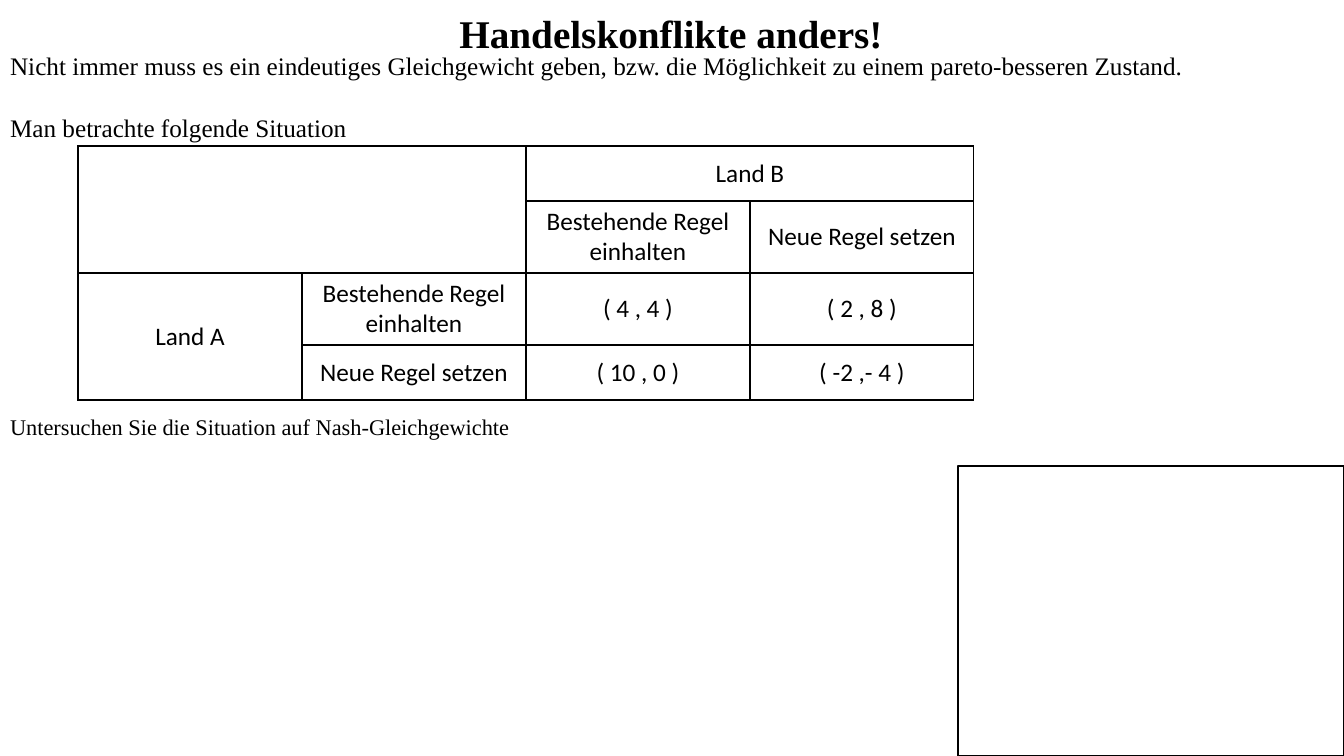
from lxml.etree import SubElement
from pptx import Presentation
from pptx.dml.color import RGBColor
from pptx.enum.shapes import MSO_SHAPE
from pptx.enum.text import MSO_ANCHOR, MSO_AUTO_SIZE, PP_ALIGN
from pptx.oxml.ns import qn
from pptx.util import Pt

EMU_PER_PX = 12192000 / 1344
BLACK = RGBColor(0x00, 0x00, 0x00)
SERIF = "Times New Roman"
SANS = "Calibri"

# text, size in points, space before in points
STATEMENTS = [
    ("Nicht immer muss es ein eindeutiges Gleichgewicht geben, "
     "bzw. die Möglichkeit zu einem pareto-besseren Zustand.", 18, 0),
    ("Man betrachte folgende Situation", 18, 23),
    ("Untersuchen Sie die Situation auf Nash-Gleichgewichte", 16, 193),
]

KEEP_RULE = "Bestehende Regel einhalten"
NEW_RULE = "Neue Regel setzen"
PAYOFFS = [
    ["", "", "Land B", ""],
    ["", "", KEEP_RULE, NEW_RULE],
    ["Land A", KEEP_RULE, "( 4 , 4 )", "( 2 , 8 )"],
    ["", NEW_RULE, "( 10 , 0 )", "( -2 ,- 4 )"],
]
MERGES = [((0, 0), (1, 1)), ((0, 2), (0, 3)), ((2, 0), (3, 0))]
ROW_HEIGHTS = [55, 72, 72, 55]


def px(length):
    return round(length * EMU_PER_PX)


def place(shape, box):
    shape.left, shape.top, shape.width, shape.height = map(px, box)


def add_run(paragraph, text, size, font_name, bold=False):
    run = paragraph.add_run()
    run.text = text
    run.font.size = Pt(size)
    run.font.name = font_name
    run.font.bold = bold
    run.font.color.rgb = BLACK


def fill_title(title, box):
    place(title, box)
    frame = title.text_frame
    frame.auto_size = MSO_AUTO_SIZE.NONE
    frame.vertical_anchor = MSO_ANCHOR.MIDDLE
    heading = frame.paragraphs[0]
    heading.alignment = PP_ALIGN.CENTER
    add_run(heading, "Handelskonflikte anders!", 28, SERIF, bold=True)


def fill_body(body, box):
    place(body, box)
    frame = body.text_frame
    frame.auto_size = MSO_AUTO_SIZE.NONE
    frame.vertical_anchor = MSO_ANCHOR.TOP
    frame.margin_top = px(8)
    for index, (text, size, gap) in enumerate(STATEMENTS):
        statement = frame.add_paragraph() if index else frame.paragraphs[0]
        properties = statement._p.get_or_add_pPr()
        properties.set("marL", "0")
        properties.set("indent", "0")
        SubElement(properties, qn("a:buNone"))
        statement.space_before = Pt(gap)
        add_run(statement, text, size, SERIF)


def outline_cell(cell):
    properties = cell._tc.get_or_add_tcPr()
    for side in ("a:lnL", "a:lnR", "a:lnT", "a:lnB"):
        line = SubElement(properties, qn(side), w=str(Pt(1)))
        fill = SubElement(line, qn("a:solidFill"))
        SubElement(fill, qn("a:srgbClr"), val=str(BLACK))


def add_payoff_table(slide, box):
    table = slide.shapes.add_table(
        len(PAYOFFS), len(PAYOFFS[0]), *map(px, box)).table
    table.first_row = False
    table.horz_banding = False
    for column in table.columns:
        column.width = px(box[2] / len(PAYOFFS[0]))
    for row, height in zip(table.rows, ROW_HEIGHTS):
        row.height = px(height)
    for row, labels in enumerate(PAYOFFS):
        for column, label in enumerate(labels):
            cell = table.cell(row, column)
            outline_cell(cell)
            cell.fill.background()
            cell.vertical_anchor = MSO_ANCHOR.MIDDLE
            if label:
                entry = cell.text_frame.paragraphs[0]
                entry.alignment = PP_ALIGN.CENTER
                add_run(entry, label, 18, SANS)
    for first, last in MERGES:
        table.cell(*first).merge(table.cell(*last))


def add_empty_frame(slide, box):
    frame = slide.shapes.add_shape(MSO_SHAPE.RECTANGLE, *map(px, box))
    frame.shadow.inherit = False
    frame.fill.background()
    frame.line.color.rgb = BLACK
    frame.line.width = Pt(1)


def main():
    presentation = Presentation()
    presentation.slide_width = px(1344)
    presentation.slide_height = px(756)
    slide = presentation.slides.add_slide(presentation.slide_layouts[1])
    fill_title(slide.shapes.title, (0, 3, 1342, 59))
    fill_body(slide.placeholders[1], (0, 42, 1342, 667))
    add_payoff_table(slide, (78, 146, 896, sum(ROW_HEIGHTS)))
    add_empty_frame(slide, (958, 466, 386, 290))
    presentation.save("out.pptx")


if __name__ == "__main__":
    main()
